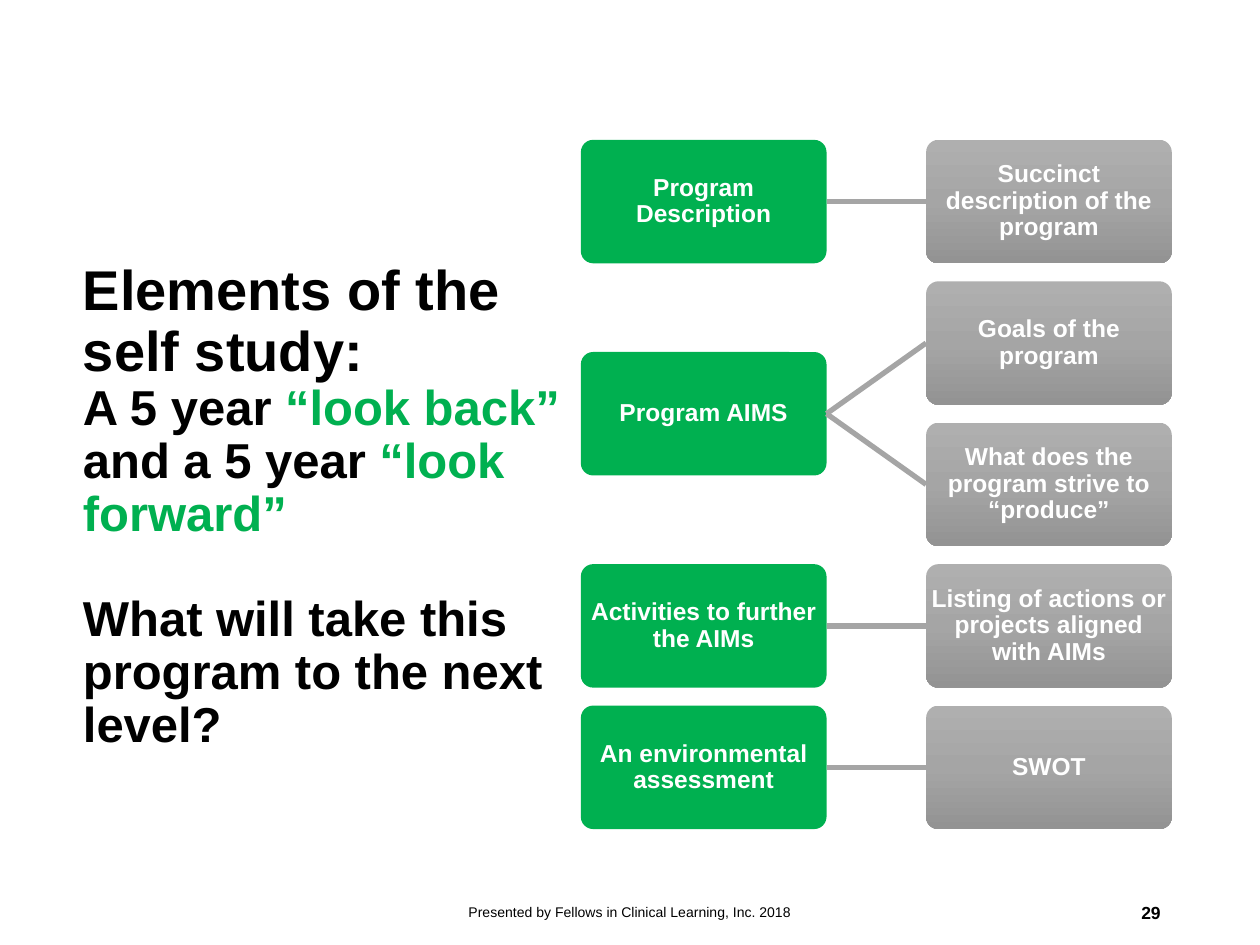
from copy import deepcopy

from lxml import etree
from pptx import Presentation
from pptx.dml.color import RGBColor
from pptx.enum.shapes import MSO_CONNECTOR, MSO_SHAPE
from pptx.enum.text import MSO_ANCHOR, PP_ALIGN
from pptx.oxml.ns import qn
from pptx.util import Inches, Pt

ROUNDED = MSO_SHAPE.ROUNDED_RECTANGLE
STRAIGHT = MSO_CONNECTOR.STRAIGHT
MIDDLE = MSO_ANCHOR.MIDDLE
LEFT, CENTER, RIGHT = PP_ALIGN.LEFT, PP_ALIGN.CENTER, PP_ALIGN.RIGHT
LEFT_SIDE, RIGHT_SIDE = 1, 3

BLACK = RGBColor(0x00, 0x00, 0x00)
WHITE = RGBColor(0xFF, 0xFF, 0xFF)
GREEN = RGBColor(0x00, 0xB0, 0x50)
GRAY_LIGHT = RGBColor(0xAF, 0xAF, 0xAF)
GRAY = RGBColor(0xA5, 0xA5, 0xA5)
GRAY_DARK = RGBColor(0x93, 0x93, 0x93)
FONT = "Arial"

# Content: heading paragraphs as (size, space before, runs)
HEADING = [
    (32, 0, [("Elements of the self study:", BLACK)]),
    (28, 0, [("A 5 year ", BLACK), ("“look back” ", GREEN),
             ("and a 5 year ", BLACK), ("“look forward”", GREEN)]),
    (28, 30, [("What will take this program to the next level?", BLACK)]),
]
# Each element of the self study with its details
ELEMENTS = [
    ("Program Description", ["Succinct description of the program"]),
    ("Program AIMS", ["Goals of the program",
                      "What does the program strive to “produce”"]),
    ("Activities to further the AIMs",
     ["Listing of actions or projects aligned with AIMs"]),
    ("An environmental assessment", ["SWOT"]),
]
FOOTER = "Presented by Fellows in Clinical Learning, Inc. 2018"
PAGE_NUMBER = "29"

# Grid of the diagram, in inches
ELEMENT_LEFT, DETAIL_LEFT = 4.61, 7.35
BOX_WIDTH, BOX_HEIGHT = 1.95, 0.98
FIRST_TOP, LAST_TOP = 1.11, 5.6
ROW_COUNT = sum(len(details) for _, details in ELEMENTS)
ROW_PITCH = (LAST_TOP - FIRST_TOP) / (ROW_COUNT - 1)

prs = Presentation()
prs.slide_width, prs.slide_height = Inches(10), Inches(7.5)
slide = prs.slides.add_slide(prs.slide_layouts[6])


def add_run(paragraph, text, size, color, bold=True):
    run = paragraph.add_run()
    run.text = text
    run.font.name, run.font.size, run.font.bold = FONT, Pt(size), bold
    run.font.color.rgb = color


def add_text_frame(left, top, width, height):
    box = slide.shapes.add_textbox(*map(Inches, (left, top, width, height)))
    frame = box.text_frame
    frame.word_wrap, frame.vertical_anchor = True, MIDDLE
    return frame


def fill_gray_gradient(fill):
    fill.gradient()
    fill.gradient_angle = 270
    first, last = fill.gradient_stops
    first.position, last.position = 0, 1
    first.color.rgb, last.color.rgb = GRAY, GRAY_DARK
    stop_list = fill._fill._gradFill.find(qn("a:gsLst"))
    middle = deepcopy(stop_list[0])
    middle.set("pos", "50000")
    stop_list.insert(1, middle)
    first.color.rgb = GRAY_LIGHT


def add_box(text, left, row):
    top = FIRST_TOP + row * ROW_PITCH
    box = slide.shapes.add_shape(
        ROUNDED, *map(Inches, (left, top, BOX_WIDTH, BOX_HEIGHT)))
    box.adjustments[0] = 0.1
    box.shadow.inherit = False
    box.line.fill.background()
    frame = box.text_frame
    frame.word_wrap, frame.vertical_anchor = True, MIDDLE
    frame.margin_left = frame.margin_right = Inches(0.01)
    frame.margin_top = frame.margin_bottom = Inches(0.01)
    paragraph = frame.paragraphs[0]
    paragraph.alignment, paragraph.line_spacing = CENTER, 0.9
    add_run(paragraph, text, 14, WHITE)
    return box


def join(element, detail):
    link = slide.shapes.add_connector(STRAIGHT, 0, 0, 0, 0)
    link.begin_connect(element, RIGHT_SIDE)
    link.end_connect(detail, LEFT_SIDE)
    link.line.color.rgb, link.line.width = GRAY, Pt(3)
    etree.SubElement(link._element.spPr, qn("a:effectLst"))


# Heading
heading = add_text_frame(0.56, 1.5, 4.02, 5.06)
for index, (size, space, runs) in enumerate(HEADING):
    paragraph = heading.add_paragraph() if index else heading.paragraphs[0]
    paragraph.alignment, paragraph.line_spacing = LEFT, 0.9
    if space:
        paragraph.space_before = Pt(space)
    for text, color in runs:
        add_run(paragraph, text, size, color)

# Diagram: each element is centred on the rows of its details
row = 0
for title, details in ELEMENTS:
    element = add_box(title, ELEMENT_LEFT, row + (len(details) - 1) / 2)
    element.fill.solid()
    element.fill.fore_color.rgb = GREEN
    for text in details:
        detail = add_box(text, DETAIL_LEFT, row)
        fill_gray_gradient(detail.fill)
        join(element, detail)
        row += 1

# Footer and page number
for text, left, width, alignment, size, bold in [
    (FOOTER, 3.31, 3.38, CENTER, 8, False),
    (PAGE_NUMBER, 7.06, 2.25, RIGHT, 10, True),
]:
    paragraph = add_text_frame(left, 7.04, width, 0.4).paragraphs[0]
    paragraph.alignment = alignment
    add_run(paragraph, text, size, BLACK, bold)

prs.save("out.pptx")
